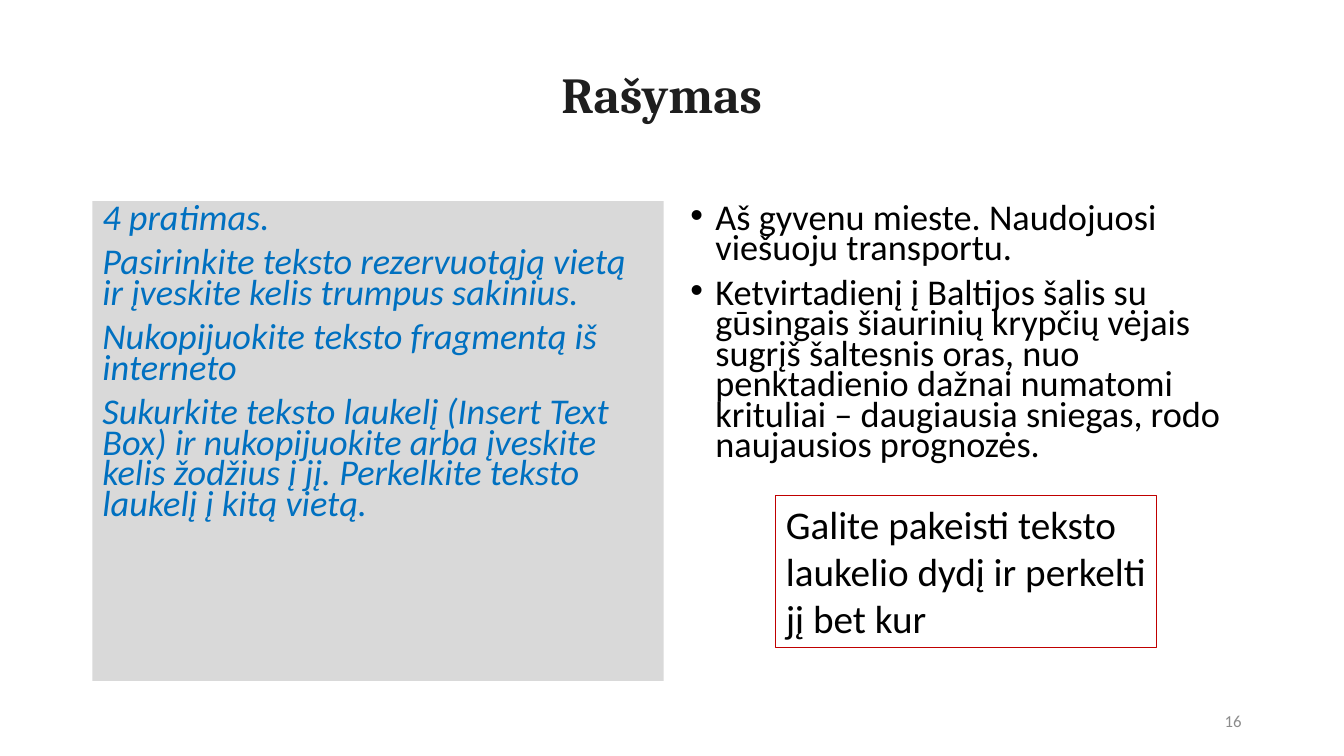
from lxml.etree import SubElement
from pptx import Presentation
from pptx.dml.color import RGBColor
from pptx.enum.text import MSO_ANCHOR, PP_ALIGN
from pptx.oxml.ns import qn
from pptx.util import Cm, Pt

EXERCISE = [
    "4 pratimas.",
    "Pasirinkite teksto rezervuotąją vietą ir įveskite kelis trumpus sakinius.",
    "Nukopijuokite teksto fragmentą iš interneto",
    "Sukurkite teksto laukelį (Insert Text Box) ir nukopijuokite arba įveskite "
    "kelis žodžius į jį. Perkelkite teksto laukelį į kitą vietą.",
]
SENTENCES = [
    "Aš gyvenu mieste. Naudojuosi viešuoju transportu.",
    "Ketvirtadienį į Baltijos šalis su gūsingais šiaurinių krypčių vėjais sugrįš "
    "šaltesnis oras, nuo penktadienio dažnai numatomi krituliai – daugiausia "
    "sniegas, rodo naujausios prognozės.",
]
BODY = {"size": 25.9, "line_spacing": 0.7, "space_before": 10}


def rgb(hex_color):
    return RGBColor.from_string(hex_color)


def add_bullet(paragraph, indent=Cm(0.635)):
    properties = paragraph._p.get_or_add_pPr()
    properties.set("marL", str(indent))
    properties.set("indent", str(-indent))
    SubElement(properties, qn("a:buFont"), typeface="Arial")
    SubElement(properties, qn("a:buChar"), char="•")


def add_text(slide, box, paragraphs, size=28, font="Calibri", color="000000",
             bold=False, italic=False, align=PP_ALIGN.LEFT, anchor=MSO_ANCHOR.TOP,
             line_spacing=1.0, space_before=0, bulleted=False):
    """Place paragraphs in box, given as left, top, width, height in cm."""
    area = slide.shapes.add_textbox(*map(Cm, box))
    frame = area.text_frame
    frame.word_wrap = True
    frame.vertical_anchor = anchor
    for number, text in enumerate(paragraphs):
        paragraph = frame.add_paragraph() if number else frame.paragraphs[0]
        paragraph.alignment = align
        paragraph.line_spacing = line_spacing
        paragraph.space_before = Pt(space_before)
        if bulleted:
            add_bullet(paragraph)
        run = paragraph.add_run()
        run.text = text
        run.font.size = Pt(size)
        run.font.name = font
        run.font.bold = bold
        run.font.italic = italic
        run.font.color.rgb = rgb(color)
    return area


def add_heading(slide, box):
    add_text(slide, box, ["Rašymas"], size=36, font="Cambria", color="1E1E1E",
             bold=True, anchor=MSO_ANCHOR.MIDDLE, line_spacing=0.9)


def add_exercise(slide, box):
    panel = add_text(slide, box, EXERCISE, color="0070C0", italic=True, **BODY)
    panel.fill.solid()
    panel.fill.fore_color.rgb = rgb("D9D9D9")


def add_answer(slide, box):
    left, top, width, height = box
    # Typed sentences
    add_text(slide, (left, top, width, 7.24), SENTENCES, bulleted=True, **BODY)
    # Movable text field, near the foot of the column
    field_height = 3.84
    field_top = top + height - field_height - 0.84
    field = add_text(slide, (left + 2.41, field_top, 9.6, field_height),
                     ["Galite pakeisti teksto laukelio dydį ir perkelti jį bet kur"])
    field.line.color.rgb = rgb("C00000")
    field.line.width = Pt(0.75)


def add_page_number(slide, box):
    add_text(slide, box, ["16"], size=12, color="8C8C8C",
             align=PP_ALIGN.RIGHT, anchor=MSO_ANCHOR.MIDDLE)


def main():
    deck = Presentation()
    deck.slide_width, deck.slide_height = Cm(33.87), Cm(19.05)
    slide = deck.slides.add_slide(deck.slide_layouts[6])

    margin, gap, column_top, column_height = 2.33, 0.42, 5.07, 12.09
    column_width = (33.87 - 2 * margin - gap) / 2
    answer_left = margin + column_width + gap

    add_heading(slide, (13.9, 1.45, 16.5, 2))
    add_exercise(slide, (margin, column_top, column_width, column_height))
    add_answer(slide, (answer_left, column_top, column_width, column_height))
    add_page_number(slide, (33.87 - margin - 7.62, 17.66, 7.62, 1.01))
    deck.save("out.pptx")


if __name__ == "__main__":
    main()
